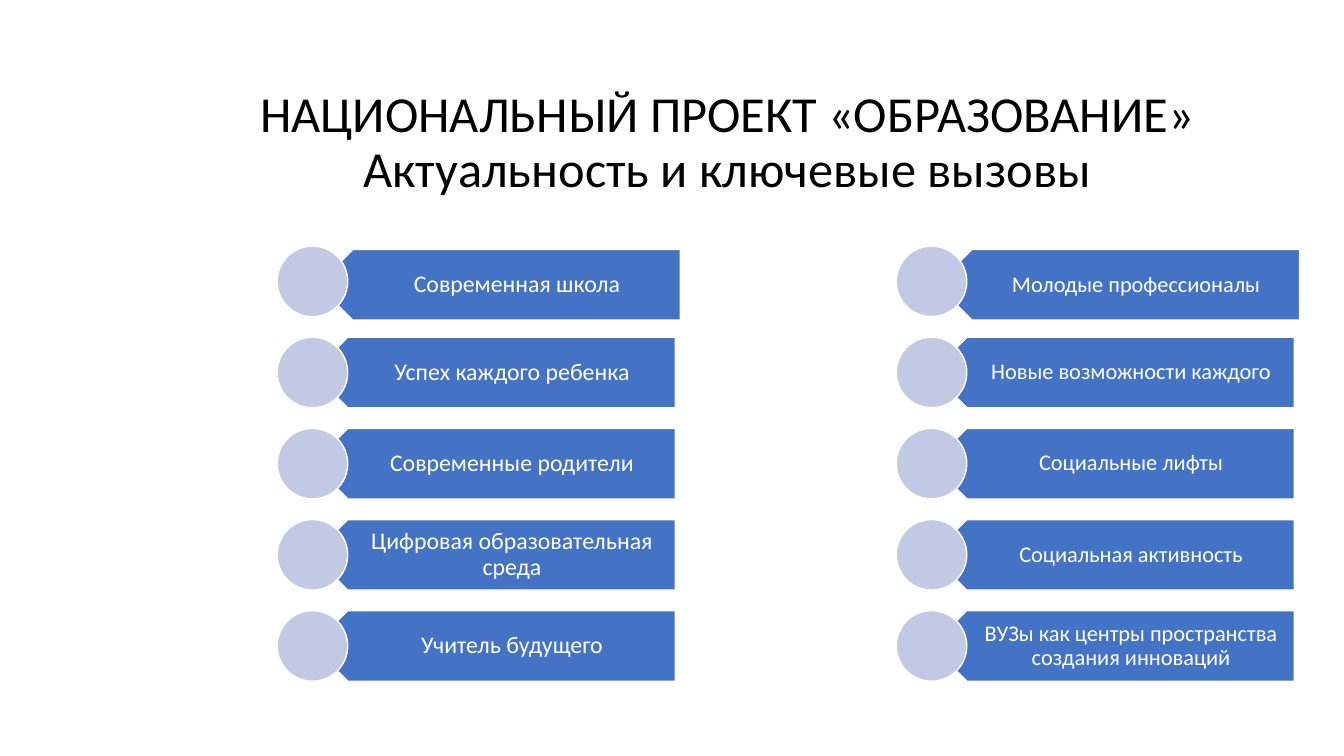
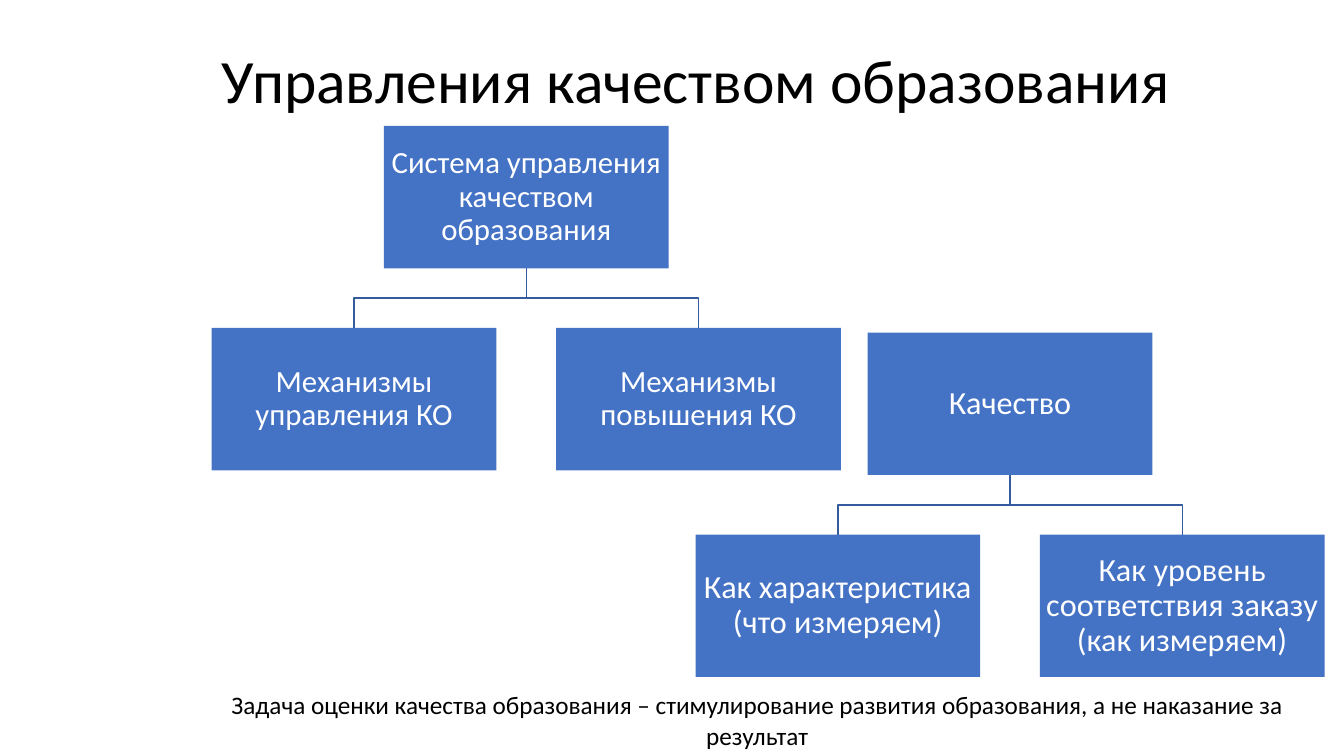
from pptx import Presentation
from pptx.dml.color import RGBColor
from pptx.enum.shapes import MSO_SHAPE as SHAPE
from pptx.enum.text import MSO_ANCHOR as ANCHOR, PP_ALIGN as ALIGN
from pptx.util import Inches, Pt

COLORS = {
    "text": "000000",
    "white": "FFFFFF",
    "blue": "4472C4",
    "pale": "C1C9E4",
    "link": "365B9D",
}
FONT = "Calibri"
COLS, ROWS = 160, 90


class Deck:
    """Style and current slide; lengths are cells of a 160 by 90 grid."""

    def __init__(self):
        self.prs = Presentation()
        self.prs.slide_width = Inches(13.333)
        self.prs.slide_height = Inches(7.5)
        self.s = None

    def new_slide(self):
        self.s = self.prs.slides.add_slide(self.prs.slide_layouts[6])

    def x(self, cols):
        return round(self.prs.slide_width * cols / COLS)

    def y(self, rows):
        return round(self.prs.slide_height * rows / ROWS)

    def place(self, x, y, w, h):
        return self.x(x), self.y(y), self.x(w), self.y(h)

    def label(self, sp, text, size, color="white", align=ALIGN.CENTER,
              anchor=ANCHOR.MIDDLE, spacing=0.9, insets=(1.2, 0.6, 1.2, 0.6)):
        """Fill a shape with one paragraph; insets are left, top, right, bottom."""
        tf = sp.text_frame
        tf.word_wrap = True
        tf.vertical_anchor = anchor
        (tf.margin_left, tf.margin_top,
         tf.margin_right, tf.margin_bottom) = self.place(*insets)
        p = tf.paragraphs[0]
        p.text = text
        p.alignment = align
        p.line_spacing = spacing
        r = p.runs[0]
        r.font.name = FONT
        r.font.size = Pt(size)
        r.font.color.rgb = RGBColor.from_string(COLORS[color])

    def text(self, box, text, size, **style):
        self.label(self.s.shapes.add_textbox(*self.place(*box)), text, size, **style)

    def title(self, box, text, size, align=ALIGN.LEFT):
        self.text(box, text, size, color="text", align=align)

    def shape(self, kind, box, fill, line=None):
        sp = self.s.shapes.add_shape(kind, *self.place(*box))
        sp.shadow.inherit = False
        sp.fill.solid()
        sp.fill.fore_color.rgb = RGBColor.from_string(COLORS[fill])
        self.outline(sp, line)
        return sp

    def outline(self, sp, color):
        if color is None:
            sp.line.fill.background()
        else:
            sp.line.color.rgb = RGBColor.from_string(COLORS[color])
            sp.line.width = Pt(1)

    def link(self, start, end):
        """Stepped line that turns halfway down from start to end."""
        (x1, y1), (x2, y2) = start, end
        middle = (y1 + y2) / 2
        points = [(self.x(x), self.y(y))
                  for x, y in ((x1, y1), (x1, middle), (x2, middle), (x2, y2))]
        builder = self.s.shapes.build_freeform(*points[0])
        builder.add_line_segments(points[1:], close=False)
        sp = builder.convert_to_shape()
        sp.shadow.inherit = False
        sp.fill.background()
        self.outline(sp, "link")

    def arrow_list(self, left, items, size):
        """Column of left-pointing plates, each with a circle over its tip."""
        top, pitch, height, width = 29.3, 10.85, 8.4, 43.2
        for i, item in enumerate(items):
            y = top + pitch * i
            dx, dy = (0.6, 0.4) if i == 0 else (0, 0)
            plate_x, plate_y = left + height / 2 + dx, y + dy
            plate = self.shape(SHAPE.PENTAGON, (plate_x, plate_y, width, height),
                               "blue", "white")
            plate.rotation = 180
            self.text((plate_x + height / 4, plate_y, width - height / 4, height),
                      item, size, insets=(3.7, 0.8, 1.5, 0.8))
            self.shape(SHAPE.OVAL, (left, y, height, height), "pale", "white")

    def tree(self, left, top, root, children, size):
        """Root box centred over a row of child boxes."""
        w, h, gap = 33.9, 16.95, 7.1
        pitch = w + gap
        root_x = left + pitch * (len(children) - 1) / 2
        child_y = top + h + gap
        boxes = [(root_x, top, root)]
        for i, child in enumerate(children):
            x = left + pitch * i
            boxes.append((x, child_y, child))
            self.link((root_x + w / 2, top + h), (x + w / 2, child_y))
        for x, y, caption in boxes:
            sp = self.shape(SHAPE.RECTANGLE, (x, y, w, h), "blue")
            self.label(sp, caption, size, insets=(0.24,) * 4)


def main():
    deck = Deck()

    deck.new_slide()
    deck.title((24.2, 8.4, 124.8, 17.4),
               "НАЦИОНАЛЬНЫЙ ПРОЕКТ «ОБРАЗОВАНИЕ» Актуальность и ключевые вызовы",
               36, ALIGN.CENTER)
    deck.arrow_list(33, [
        "Современная школа",
        "Успех каждого ребенка",
        "Современные родители",
        "Цифровая образовательная среда",
        "Учитель будущего",
    ], 17)
    deck.arrow_list(106.7, [
        "Молодые профессионалы",
        "Новые возможности каждого",
        "Социальные лифты",
        "Социальная активность",
        "ВУЗы как центры пространства создания инноваций",
    ], 16)

    deck.new_slide()
    deck.title((25.2, 1.3, 134, 17.4), "Управления качеством образования", 44)
    deck.tree(25.2, 15, "Система управления качеством образования",
              ["Механизмы управления КО", "Механизмы повышения КО"], 22)
    deck.tree(82.8, 39.6, "Качество",
              ["Как характеристика (что измеряем)",
               "Как уровень соответствия заказу (как измеряем)"], 23)
    deck.text((24.1, 81.5, 132.1, 8.5),
              "Задача оценки качества образования – стимулирование развития "
              "образования, а не наказание за результат",
              18, color="text", anchor=ANCHOR.TOP, spacing=1.0)

    deck.prs.save("out.pptx")


if __name__ == "__main__":
    main()
